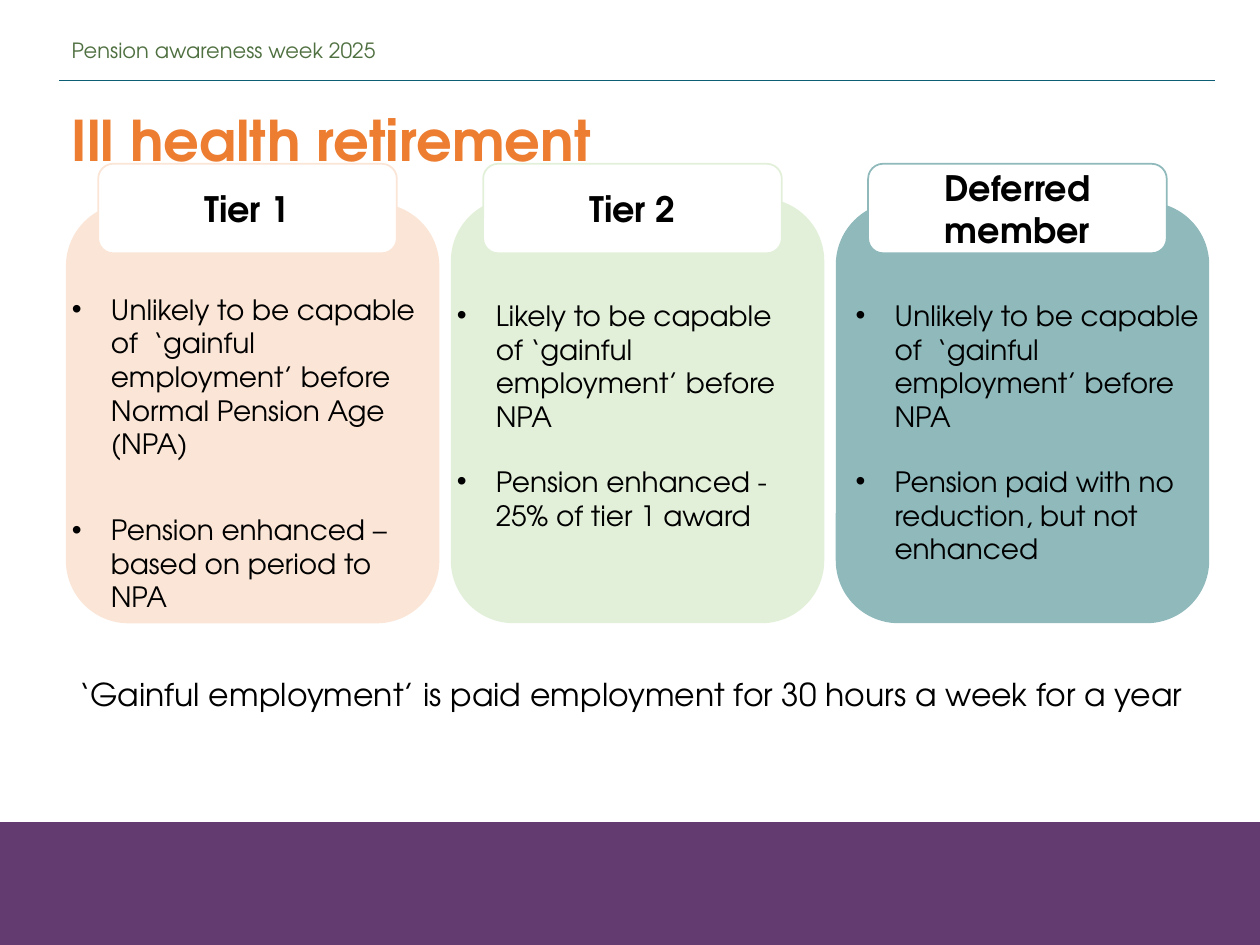
import pptx
import pptx.dml.color
import pptx.enum.shapes
import pptx.enum.text
import pptx.util
import lxml.etree
import pptx.oxml.ns

FONT = "TeX Gyre Adventor"
SLIDE_W, SLIDE_H = 10, 7.5
LEFT, PITCH = 0.53, 3.055
PANEL_W, PANEL_BOTTOM = 2.95, 4.94
LABEL_INSET, LABEL_TOP, LABEL_W, LABEL_H = 0.25, 1.3, 2.37, 0.71
HANG = 0.31

HEADER = "Pension awareness week 2025"
TITLE = "Ill health retirement"
FOOTNOTE = "‘Gainful employment’ is paid employment for 30 hours a week for a year"

# list_box: offset from the panel's left edge, top, width, height
# gap: points between the two bullets
TIERS = [
    {"name": "Tier 1", "color": "FBE5D6", "panel_top": 1.62,
     "list_box": (-0.06, 2.27, 3.06, 2.14), "gap": 30,
     "points": ["Unlikely to be capable of  ‘gainful employment’ before Normal Pension Age (NPA)",
                "Pension enhanced – based on period to NPA"]},
    {"name": "Tier 2", "color": "E2F0D9", "panel_top": 1.58,
     "list_box": (-0.06, 2.32, 2.95, 1.7), "gap": 18,
     "points": ["Likely to be capable of ‘gainful employment’ before NPA",
                "Pension enhanced - 25% of tier 1 award"]},
    {"name": "Deferred member", "color": "8FB9BB", "panel_top": 1.61,
     "list_box": (0.05, 2.32, 2.95, 1.97), "gap": 18,
     "points": ["Unlikely to be capable of  ‘gainful employment’ before NPA",
                "Pension paid with no reduction, but not enhanced"]},
]

ALIGN = pptx.enum.text.PP_ALIGN
ANCHOR = pptx.enum.text.MSO_ANCHOR
SHAPES = pptx.enum.shapes.MSO_SHAPE


def rgb(hex_color):
    return pptx.dml.color.RGBColor.from_string(hex_color)


def inches(*values):
    return [pptx.util.Inches(value) for value in values]


def add_block(slide, preset, box, fill, line):
    block = slide.shapes.add_shape(preset, *inches(*box))
    block.shadow.inherit = False
    block.fill.solid()
    block.fill.fore_color.rgb = rgb(fill)
    block.line.color.rgb = rgb(line)
    block.line.width = pptx.util.Pt(1)
    return block


def write(shape, lines, size, color="000000", bold=False, align=ALIGN.LEFT,
          anchor=ANCHOR.TOP, spacing=1.0, gap=0, bullet=""):
    """Fill a shape with paragraphs; gap is the points between them."""
    frame = shape.text_frame
    frame.text = "\n".join(lines)
    frame.word_wrap = True
    frame.auto_size = pptx.enum.text.MSO_AUTO_SIZE.NONE
    frame.vertical_anchor = anchor
    for index, paragraph in enumerate(frame.paragraphs):
        properties = paragraph._p.get_or_add_pPr()
        properties.set("marL", str(pptx.util.Inches(HANG if bullet else 0)))
        properties.set("indent", str(pptx.util.Inches(-HANG if bullet else 0)))
        marker = "a:buChar" if bullet else "a:buNone"
        mark = lxml.etree.SubElement(properties, pptx.oxml.ns.qn(marker))
        if bullet:
            mark.set("char", bullet)
        paragraph.alignment = align
        paragraph.line_spacing = spacing
        paragraph.space_before = pptx.util.Pt(gap if index else 0)
        paragraph.space_after = pptx.util.Pt(0)
        for run in paragraph.runs:
            run.font.name = FONT
            run.font.size = pptx.util.Pt(size)
            run.font.bold = bold
            run.font.color.rgb = rgb(color)


def place(slide, placeholder, box):
    """Move a placeholder to its box and in front of the other shapes."""
    placeholder.left, placeholder.top, placeholder.width, placeholder.height = inches(*box)
    slide.shapes.element.append(placeholder.element)


def main():
    deck = pptx.Presentation()
    deck.slide_width, deck.slide_height = inches(SLIDE_W, SLIDE_H)
    slide = deck.slides.add_slide(deck.slide_layouts.get_by_name("Comparison"))
    for placeholder in list(slide.placeholders):
        if placeholder.placeholder_format.idx > 4:
            placeholder.element.getparent().remove(placeholder.element)
    title = slide.shapes.title
    *lists, footnote = [p for p in slide.placeholders if p.placeholder_format.idx]

    add_block(slide, SHAPES.RECTANGLE, (0, 6.53, SLIDE_W, 0.97), "633B71", "633B71")
    rule = slide.shapes.add_connector(pptx.enum.shapes.MSO_CONNECTOR.STRAIGHT,
                                      *inches(0.47, 0.64, 9.64, 0.64))
    rule.line.color.rgb = rgb("0B5E74")
    rule.line.width = pptx.util.Pt(0.5)
    lxml.etree.SubElement(rule.element.spPr, pptx.oxml.ns.qn("a:effectLst"))
    header = slide.shapes.add_textbox(*inches(0.47, 0.27, 6.51, 0.25))
    write(header, [HEADER], 12, "4F7040", spacing=0.9)

    for column, (tier, points) in enumerate(zip(TIERS, lists)):
        left, top = LEFT + column * PITCH, tier["panel_top"]
        add_block(slide, SHAPES.ROUNDED_RECTANGLE,
                  (left, top, PANEL_W, PANEL_BOTTOM - top), tier["color"], tier["color"])
        label = add_block(slide, SHAPES.ROUNDED_RECTANGLE,
                          (left + LABEL_INSET, LABEL_TOP, LABEL_W, LABEL_H),
                          "FFFFFF", tier["color"])
        write(label, [tier["name"]], 20, bold=True, align=ALIGN.CENTER, anchor=ANCHOR.MIDDLE)
        offset, *rest = tier["list_box"]
        place(slide, points, (left + offset, *rest))
        write(points, tier["points"], 16, gap=tier["gap"], bullet="•")

    place(slide, title, (0.47, 0.79, 5, 0.64))
    write(title, [TITLE], 32, "ED7D31", bold=True)
    place(slide, footnote, (LEFT, 5.31, 9.05, 0.4))
    write(footnote, [FOOTNOTE], 18)
    deck.save("out.pptx")


if __name__ == "__main__":
    main()
